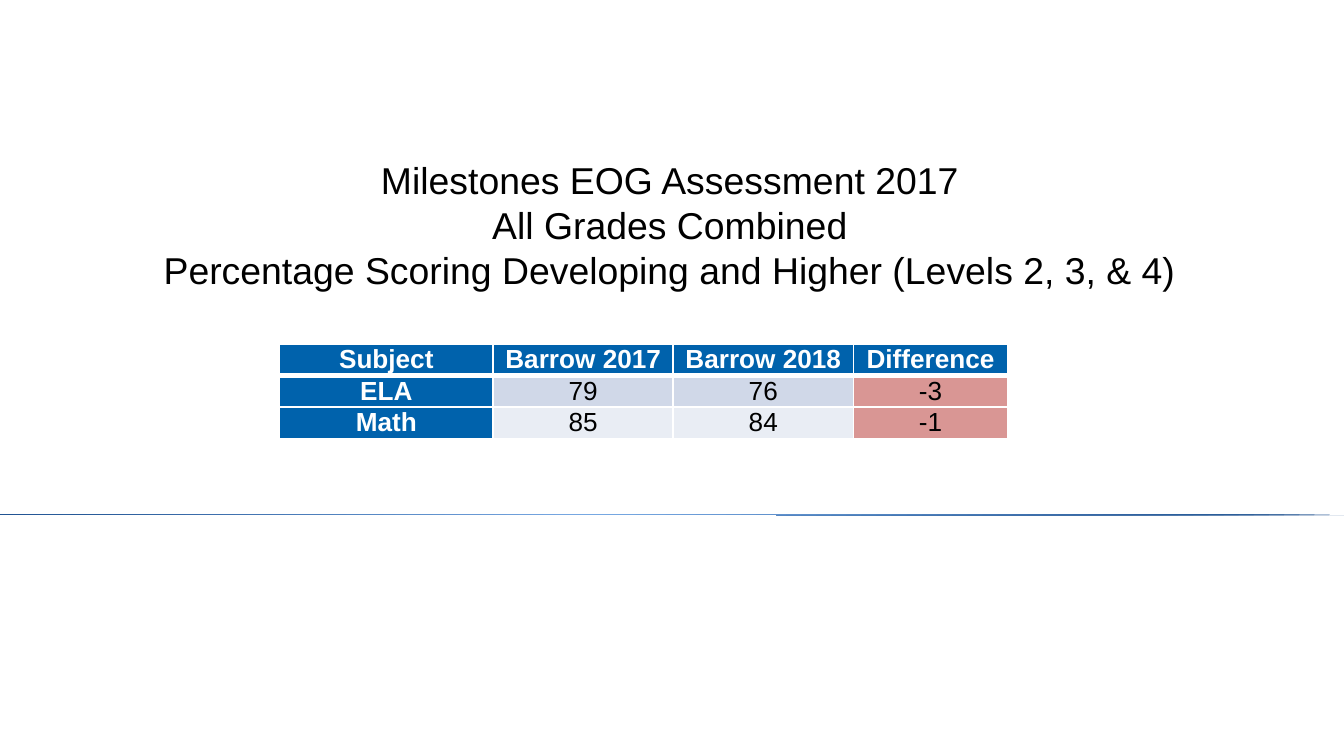
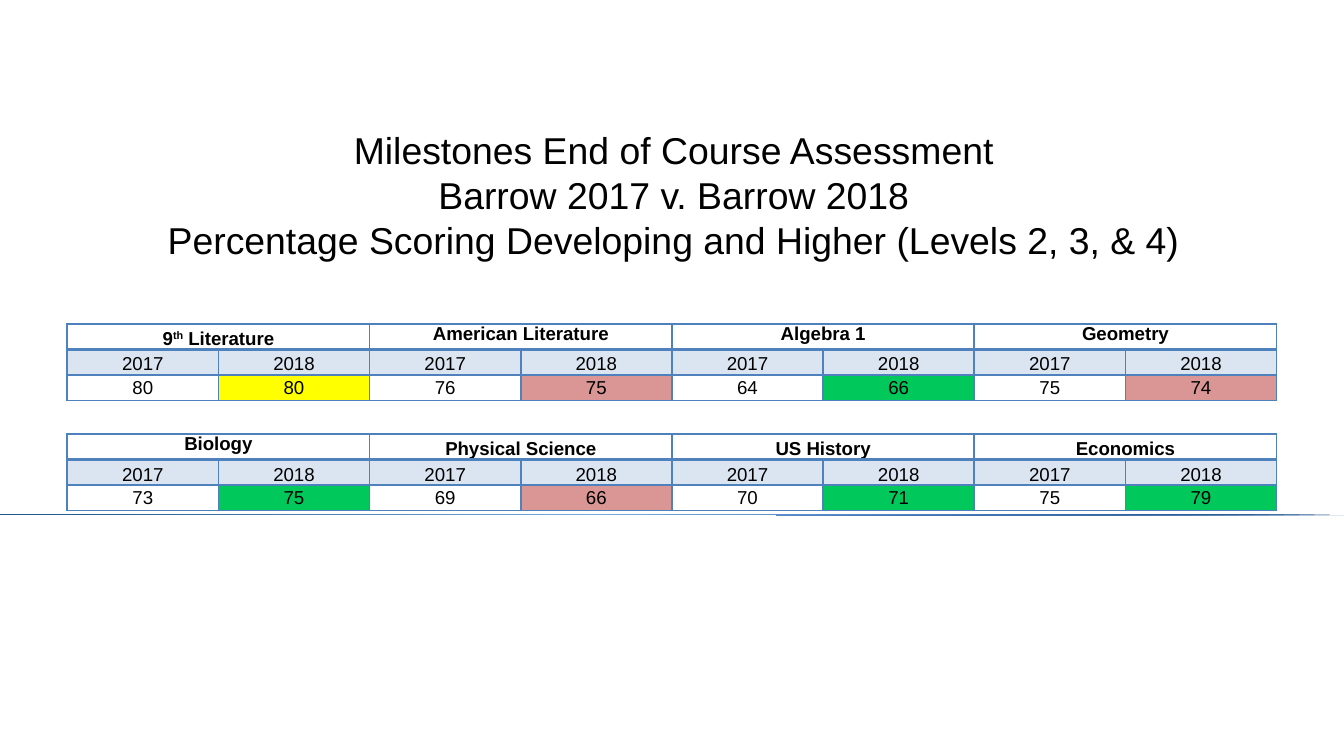
import pptx
import pptx.dml.color
import pptx.enum.shapes
import pptx.enum.text
import pptx.oxml
import pptx.util
from lxml import etree

Inches, Pt = pptx.util.Inches, pptx.util.Pt
RGB = pptx.dml.color.RGBColor
TOP = pptx.enum.text.MSO_ANCHOR.TOP
MIDDLE = pptx.enum.text.MSO_ANCHOR.MIDDLE
BOTTOM = pptx.enum.text.MSO_ANCHOR.BOTTOM
CENTER = pptx.enum.text.PP_ALIGN.CENTER
A = "http://schemas.openxmlformats.org/drawingml/2006/main"

FONT = "Arial"
BLACK = RGB(0x00, 0x00, 0x00)
WHITE = RGB(0xFF, 0xFF, 0xFF)
HEADER_BLUE = RGB(0x00, 0x62, 0xAC)
BAND_DARK = RGB(0xD0, 0xD8, 0xE8)
BAND_LIGHT = RGB(0xE9, 0xED, 0xF4)
GRID_BLUE = RGB(0x4F, 0x81, 0xBD)
RULE_DARK = RGB(0x19, 0x4D, 0x8C)
RULE_LIGHT = RGB(0x7B, 0xAB, 0xE5)
# Fill for a fall, no change and a rise between the two years
TREND = {-1: RGB(0xD9, 0x96, 0x94), 0: RGB(0xFF, 0xFF, 0x00), 1: RGB(0x00, 0xC8, 0x5A)}

WIDTH, HEIGHT = 10, 5.625
LEVELS = "Percentage Scoring Developing and Higher (Levels 2, 3, & 4)"


def write_cell(cell, text, size, color=BLACK, bold=False, anchor=MIDDLE, margin=0.06):
    """Write centred text; parts between bars are superscript."""
    cell.vertical_anchor = anchor
    cell.margin_left = cell.margin_right = Inches(margin)
    cell.margin_top = cell.margin_bottom = 0
    line = cell.text_frame.paragraphs[0]
    for i, part in enumerate(text.split("|")):
        run = line.add_run()
        run.text = part
        if i % 2:
            run._r.get_or_add_rPr().set("baseline", "30000")
    line.alignment = CENTER
    line.font.name, line.font.size, line.font.bold = FONT, Pt(size), bold
    line.font.color.rgb = color


def paint_cell(cell, fill, border, top=1, bottom=1, alpha=None):
    """Set a cell's fill, with alpha in percent, and its four border lines."""
    if fill is None:
        cell.fill.background()
    else:
        cell.fill.solid()
        cell.fill.fore_color.rgb = fill
    properties = cell._tc.get_or_add_tcPr()
    if alpha:
        color = properties.find(f".//{{{A}}}srgbClr")
        etree.SubElement(color, f"{{{A}}}alpha", val=str(alpha * 1000))
    for i, (side, points) in enumerate([("L", 1), ("R", 1), ("T", top), ("B", bottom)]):
        properties.insert(i, pptx.oxml.parse_xml(
            f'<a:ln{side} xmlns:a="{A}" w="{Pt(points)}"><a:solidFill>'
            f'<a:srgbClr val="{border}"/></a:solidFill></a:ln{side}>'))


deck = pptx.Presentation()
deck.slide_width, deck.slide_height = Inches(WIDTH), Inches(HEIGHT)

# Shared rule and title
titles = [
    (0.75, 1.12, ["Milestones EOG Assessment 2017", "All Grades Combined", LEVELS]),
    (0.78, 0.9, ["Milestones End of Course Assessment", "Barrow 2017 v. Barrow 2018", LEVELS]),
]
slides = []
for left, top, lines in titles:
    slide = deck.slides.add_slide(deck.slide_layouts[6])
    slides.append(slide)

    rule = slide.shapes.add_shape(pptx.enum.shapes.MSO_SHAPE.RIGHT_TRIANGLE,
                                  0, Inches(3.83), Inches(WIDTH), Pt(0.25))
    rule.rotation = 180
    rule.shadow.inherit = False
    rule.line.fill.background()
    stops = "".join(f'<a:gs pos="{share * 1000}"><a:srgbClr val="{color}"/></a:gs>'
                    for share, color in [(0, RULE_DARK), (55, RULE_LIGHT), (100, RULE_DARK)])
    rule._element.spPr.insert(2, pptx.oxml.parse_xml(
        f'<a:gradFill xmlns:a="{A}"><a:gsLst>{stops}</a:gsLst>'
        f'<a:lin ang="{50 * 60000}" scaled="0"/></a:gradFill>'))

    title = slide.shapes.add_textbox(Inches(left), Inches(top), Inches(8.47), Inches(1.11))
    frame = title.text_frame
    frame.word_wrap = True
    frame.text = "\n".join(lines)
    for line in frame.paragraphs:
        line.alignment = CENTER
        line.line_spacing = Pt(24)
        line.font.name, line.font.size = FONT, Pt(20)
        line.font.color.rgb = BLACK

# Slide 1: end-of-grade results
subjects = [("ELA", 79, 76, BAND_DARK), ("Math", 85, 84, BAND_LIGHT)]
subject_widths = [1.59, 1.34, 1.34, 1.15]
grades = slides[0].shapes.add_table(3, 4, Inches(2.08), Inches(2.56),
                                    Inches(sum(subject_widths)), Inches(0.7)).table
for column, width in zip(grades.columns, subject_widths):
    column.width = Inches(width)
for c, heading in enumerate(["Subject", "Barrow 2017", "Barrow 2018", "Difference"]):
    write_cell(grades.cell(0, c), heading, 14, WHITE, True, margin=0.07)
    paint_cell(grades.cell(0, c), HEADER_BLUE, WHITE, bottom=3)
for r, (subject, before, after, band) in enumerate(subjects, 1):
    change = after - before
    trend = TREND[(change > 0) - (change < 0)]
    fills = [HEADER_BLUE, band, band, trend]
    for c, (value, fill) in enumerate(zip([subject, before, after, change], fills)):
        write_cell(grades.cell(r, c), str(value), 14, WHITE if c == 0 else BLACK,
                   c == 0, margin=0.07)
        paint_cell(grades.cell(r, c), fill, WHITE, top=3 if r == 1 else 1)

# Slide 2: end-of-course results, two columns per course
course_tables = [
    (2.41, [("9|th| Literature", BOTTOM, 80, 80), ("American Literature", TOP, 76, 75),
            ("Algebra 1", TOP, 64, 66), ("Geometry", TOP, 75, 74)]),
    (3.23, [("Biology", TOP, 73, 75), ("Physical Science", BOTTOM, 69, 66),
            ("US History", BOTTOM, 70, 71), ("Economics", BOTTOM, 75, 79)]),
]
for top, courses in course_tables:
    table = slides[1].shapes.add_table(3, 2 * len(courses), Inches(WIDTH * 0.05), Inches(top),
                                       Inches(WIDTH * 0.9), Inches(0.57)).table
    table.first_row = table.horz_banding = False
    for i, (course, anchor, before, after) in enumerate(courses):
        heading = table.cell(0, 2 * i)
        heading.merge(table.cell(0, 2 * i + 1))
        write_cell(heading, course, 10, bold=True, anchor=anchor)
        trend = TREND[(after > before) - (after < before)]
        for c, year, score, fill in [(2 * i, "2017", before, None),
                                     (2 * i + 1, "2018", after, trend)]:
            paint_cell(table.cell(0, c), None, GRID_BLUE, bottom=2)
            write_cell(table.cell(1, c), year, 10, anchor=BOTTOM)
            paint_cell(table.cell(1, c), GRID_BLUE, GRID_BLUE, top=2, alpha=20)
            write_cell(table.cell(2, c), str(score), 10)
            paint_cell(table.cell(2, c), fill, GRID_BLUE)

deck.save("out.pptx")
